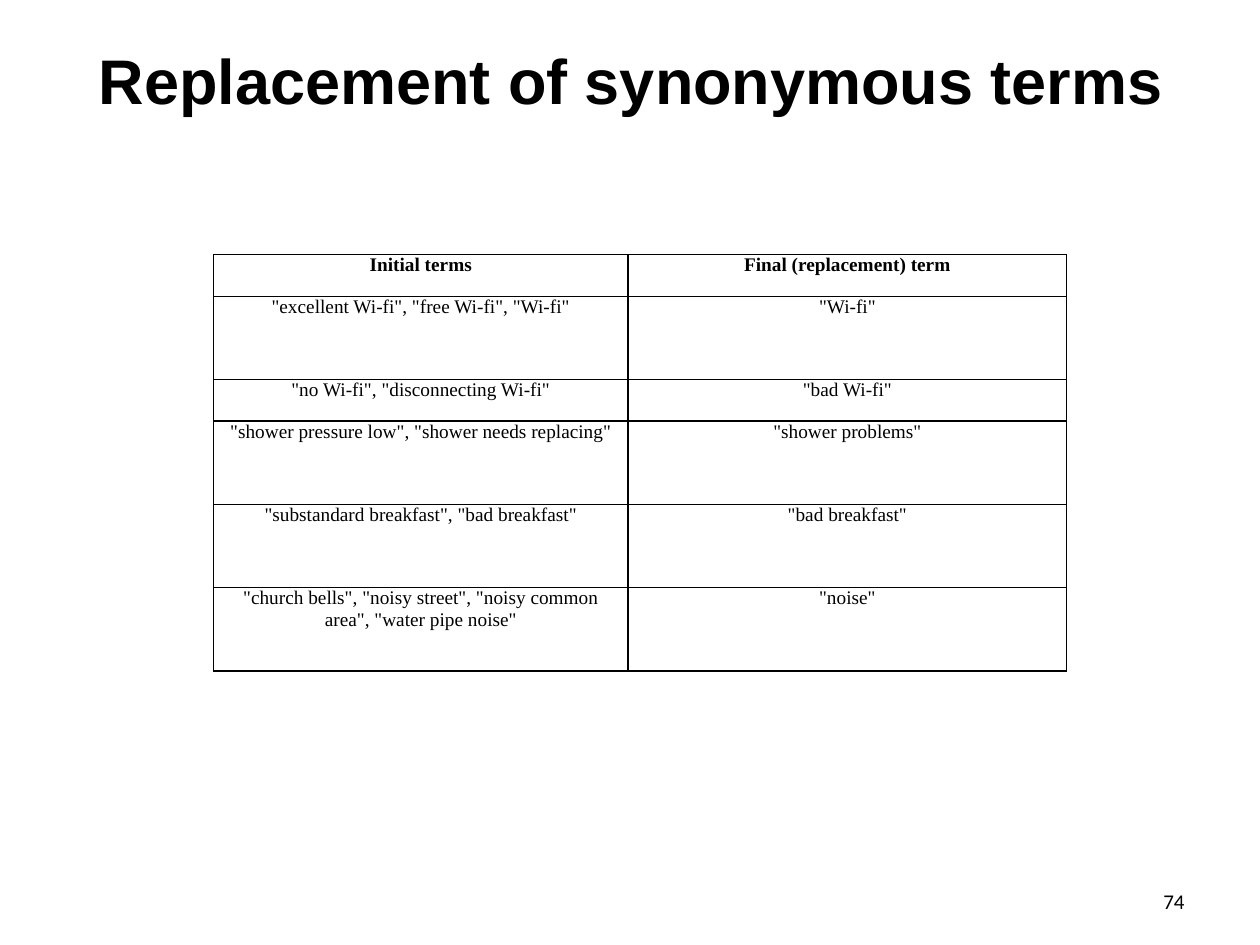
from lxml.etree import SubElement
from pptx import Presentation
from pptx.dml.color import RGBColor
from pptx.enum.text import MSO_ANCHOR, PP_ALIGN
from pptx.oxml.ns import qn
from pptx.util import Pt

COLORS = {"ink": "000000", "paper": "FFFFFF"}

TERMS = [
    ("Initial terms", "Final (replacement) term"),
    ('"excellent Wi-fi", "free Wi-fi", "Wi-fi"', '"Wi-fi"'),
    ('"no Wi-fi", "disconnecting Wi-fi"', '"bad Wi-fi"'),
    ('"shower pressure low", "shower needs replacing"', '"shower problems"'),
    ('"substandard breakfast", "bad breakfast"', '"bad breakfast"'),
    ('"church bells", "noisy street", "noisy common area", "water pipe noise"', '"noise"'),
]
COLUMN_WIDTHS = (237, 250.5)
SHORT_ROW = 23.8
ROW_UNITS = (1, 2, 1, 2, 2, 2)


def write_text(frame, text, *, font, size, bold=False, align=PP_ALIGN.CENTER):
    paragraph = frame.paragraphs[0]
    paragraph.alignment = align
    run = paragraph.add_run()
    run.text = text
    run.font.name = font
    run.font.size = Pt(size)
    run.font.bold = bold
    run.font.color.rgb = RGBColor.from_string(COLORS["ink"])


class SlideBuilder:
    title_font = "Arial"
    table_font = "Times New Roman"
    number_font = "Calibri"
    border_width = 1

    def __init__(self, slide):
        self.slide = slide

    def title(self, text, left, top, width, height):
        shape = self.slide.shapes.title
        shape.left, shape.top = Pt(left), Pt(top)
        shape.width, shape.height = Pt(width), Pt(height)
        shape.text_frame.vertical_anchor = MSO_ANCHOR.MIDDLE
        write_text(shape.text_frame, text, font=self.title_font, size=36, bold=True)

    def page_number(self, text, left, top, width, height):
        shape = self.slide.shapes.add_textbox(Pt(left), Pt(top), Pt(width), Pt(height))
        frame = shape.text_frame
        frame.word_wrap = True
        frame.vertical_anchor = MSO_ANCHOR.MIDDLE
        write_text(frame, text, font=self.number_font, size=12, align=PP_ALIGN.RIGHT)

    def table(self, rows, left, top, widths, heights):
        shape = self.slide.shapes.add_table(
            len(rows), len(widths), Pt(left), Pt(top), Pt(sum(widths)), Pt(sum(heights))
        )
        table = shape.table
        for column, width in zip(table.columns, widths):
            column.width = Pt(width)
        for row, height in zip(table.rows, heights):
            row.height = Pt(height)
        for row_index, texts in enumerate(rows):
            for column_index, text in enumerate(texts):
                self.cell(table.cell(row_index, column_index), text, bold=row_index == 0)

    def cell(self, cell, text, bold):
        cell.margin_left = cell.margin_right = Pt(5)
        cell.margin_top = cell.margin_bottom = Pt(0)
        cell.vertical_anchor = MSO_ANCHOR.TOP
        properties = cell._tc.get_or_add_tcPr()
        for side in ("a:lnL", "a:lnR", "a:lnT", "a:lnB"):
            border = SubElement(properties, qn(side), w=str(Pt(self.border_width)))
            fill = SubElement(border, qn("a:solidFill"))
            SubElement(fill, qn("a:srgbClr"), val=COLORS["ink"])
        cell.fill.solid()
        cell.fill.fore_color.rgb = RGBColor.from_string(COLORS["paper"])
        write_text(cell.text_frame, text, font=self.table_font, size=11, bold=bold)


def main():
    presentation = Presentation()
    presentation.slide_width, presentation.slide_height = Pt(720), Pt(540)
    title_only = presentation.slide_layouts[5]
    builder = SlideBuilder(presentation.slides.add_slide(title_only))
    builder.title("Replacement of synonymous terms", 36.5, 9.5, 648, 71.5)
    builder.table(TERMS, 122, 145.5, COLUMN_WIDTHS, [SHORT_ROW * units for units in ROW_UNITS])
    builder.page_number("74", 516, 500.5, 168, 29)
    presentation.save("out.pptx")


if __name__ == "__main__":
    main()
